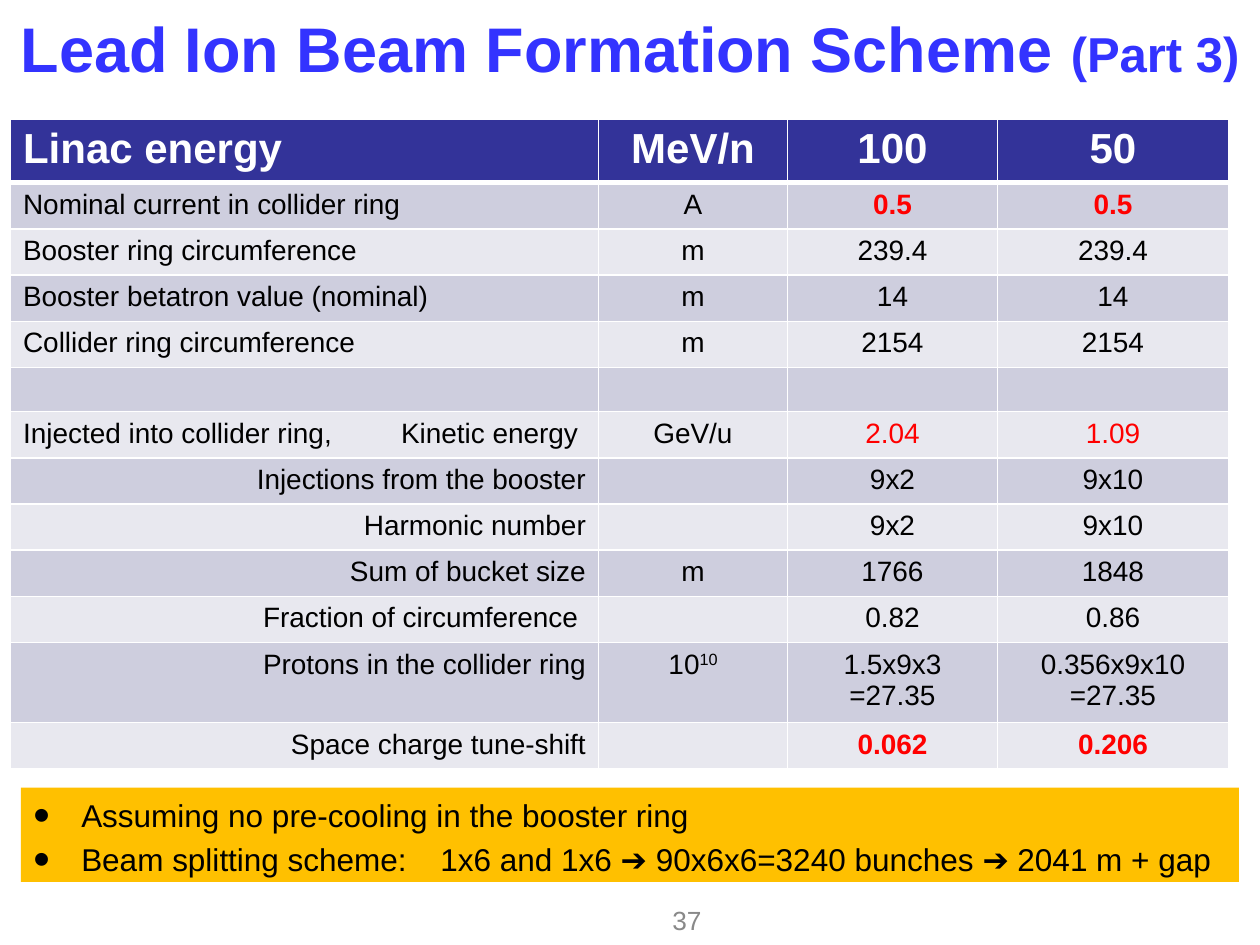
from lxml import etree
from pptx import Presentation
from pptx import util as u
from pptx.dml.color import RGBColor
from pptx.enum import shapes, text
from pptx.oxml import ns

BLUE = RGBColor(0x33, 0x33, 0xFF)
NAVY = RGBColor(0x33, 0x33, 0x99)
LILAC = RGBColor(0xCE, 0xCE, 0xDE)
PALE = RGBColor(0xE8, 0xE8, 0xEF)
AMBER = RGBColor(0xFF, 0xC0, 0x00)
GRAY = RGBColor(0x89, 0x89, 0x89)
RED = RGBColor(0xFF, 0x00, 0x00)
BLACK = RGBColor(0x00, 0x00, 0x00)
WHITE = RGBColor(0xFF, 0xFF, 0xFF)

LEFT, CENTER, RIGHT = text.PP_ALIGN.LEFT, text.PP_ALIGN.CENTER, text.PP_ALIGN.RIGHT
UNIT = u.Inches(1) / 6
COLUMNS = [28, 9, 10, 11]
HEADER_ROW, BODY_ROW, DOUBLE_ROW = 2.8, 2.09, 3.57

ROWS = [
    ("Linac energy", "MeV/n", "100", "50"),
    ("Nominal current in collider ring", "A", "0.5", "0.5"),
    ("Booster ring circumference", "m", "239.4", "239.4"),
    ("Booster betatron value (nominal)", "m", "14", "14"),
    ("Collider ring circumference", "m", "2154", "2154"),
    ("", "", "", ""),
    ("Injected into collider ring,\tKinetic energy", "GeV/u", "2.04", "1.09"),
    ("Injections from the booster", "", "9x2", "9x10"),
    ("Harmonic number", "", "9x2", "9x10"),
    ("Sum of bucket size", "m", "1766", "1848"),
    ("Fraction of circumference ", "", "0.82", "0.86"),
    ("Protons in the collider ring", "10^10", "1.5x9x3\n=27.35", "0.356x9x10\n=27.35"),
    ("Space charge tune-shift", "", "0.062", "0.206"),
]
FIRST_INDENTED = 7
RED_ROWS = {1, 6, 12}
BOLD_ROWS = {0, 1, 12}
NOTES = [
    "Assuming no pre-cooling in the booster ring",
    "Beam splitting scheme:\t1x6 and 1x6 ➔ 90x6x6=3240 bunches ➔ 2041 m + gap",
]


def grid(*values):
    return [u.Emu(round(v * UNIT)) for v in values]


def set_font(p, size, color, bold=False):
    p.font.name = "Arial"
    p.font.size = u.Pt(size)
    p.font.bold = bold
    p.font.color.rgb = color


def add_tab(p, inches):
    tabs = etree.SubElement(p._p.get_or_add_pPr(), ns.qn("a:tabLst"))
    etree.SubElement(tabs, ns.qn("a:tab"), pos=str(u.Inches(inches)), algn="l")


def set_borders(cell, bottom):
    props = cell._tc.get_or_add_tcPr()
    for i, (side, points) in enumerate((("L", 1), ("R", 1), ("T", 1), ("B", bottom))):
        line = etree.Element(ns.qn(f"a:ln{side}"), w=str(u.Pt(points)))
        fill = etree.SubElement(line, ns.qn("a:solidFill"))
        etree.SubElement(fill, ns.qn("a:srgbClr"), val=str(WHITE))
        props.insert(i, line)


def add_title(s, box):
    tf = s.shapes.add_textbox(*grid(*box)).text_frame
    tf.word_wrap = True
    tf.margin_left = tf.margin_right = 0
    tf.vertical_anchor = text.MSO_ANCHOR.MIDDLE
    p = tf.paragraphs[0]
    p.alignment = CENTER
    set_font(p, 36, BLUE, True)
    for words, size in (("Lead Ion Beam Formation Scheme ", 36), ("(Part 3)", 28)):
        r = p.add_run()
        r.text = words
        r.font.size = u.Pt(size)


def fill_cell(cell, row, col, words):
    cell.fill.solid()
    cell.fill.fore_color.rgb = NAVY if row == 0 else LILAC if row % 2 else PALE
    set_borders(cell, 3 if row == 0 else 1)
    if not words:
        cell.margin_top = cell.margin_bottom = 0
    base, _, power = words.partition("^")
    cell.text_frame.text = base
    is_red = col > 1 and row in RED_ROWS
    for p in cell.text_frame.paragraphs:
        p.alignment = CENTER if col else RIGHT if row >= FIRST_INDENTED else LEFT
        if "\t" in words:
            add_tab(p, 3)
        color = WHITE if row == 0 else RED if is_red else BLACK
        set_font(p, 16 if row else 24, color, row == 0 or is_red and row in BOLD_ROWS)
        if power:
            r = p.add_run()
            r.text = power
            r.font._element.set("baseline", "30000")


def add_beam_table(s, left, top):
    heights = [HEADER_ROW if i == 0 else DOUBLE_ROW if "\n" in row[2] else BODY_ROW
               for i, row in enumerate(ROWS)]
    box = grid(left, top, sum(COLUMNS), sum(heights))
    table = s.shapes.add_table(len(ROWS), len(COLUMNS), *box).table
    for column, width in zip(table.columns, grid(*COLUMNS)):
        column.width = width
    for i, (row, height) in enumerate(zip(ROWS, grid(*heights))):
        table.rows[i].height = height
        for j, words in enumerate(row):
            fill_cell(table.cell(i, j), i, j, words)


def add_notes(s, box):
    sp = s.shapes.add_shape(shapes.MSO_SHAPE.RECTANGLE, *grid(*box))
    sp.shadow.inherit = False
    sp.fill.solid()
    sp.fill.fore_color.rgb = AMBER
    sp.line.fill.background()
    tf = sp.text_frame
    tf.word_wrap = True
    tf.vertical_anchor = text.MSO_ANCHOR.TOP
    tf.margin_top = u.Inches(0.07)
    tf.text = "\n".join(NOTES)
    for i, p in enumerate(tf.paragraphs):
        p.alignment = LEFT
        if i:
            p.space_before = u.Pt(3.6)
        props = p._p.get_or_add_pPr()
        props.set("marL", str(u.Inches(0.38)))
        props.set("indent", str(u.Inches(-0.38)))
        etree.SubElement(props, ns.qn("a:buSzPct"), val="150000")
        etree.SubElement(props, ns.qn("a:buFont"), typeface="Arial")
        etree.SubElement(props, ns.qn("a:buChar"), char="•")
        if "\t" in NOTES[i]:
            add_tab(p, 3.23)
        set_font(p, 18, BLACK)


def add_page_number(s, box):
    tf = s.shapes.add_textbox(*grid(*box)).text_frame
    tf.word_wrap = True
    tf.vertical_anchor = text.MSO_ANCHOR.MIDDLE
    tf.text = "37"
    p = tf.paragraphs[0]
    p.alignment = RIGHT
    set_font(p, 15, GRAY)


def main():
    prs = Presentation()
    prs.slide_width, prs.slide_height = grid(60, 45)
    s = prs.slides.add_slide(prs.slide_layouts[6])
    add_title(s, (0, 0, 60, 4.5))
    add_beam_table(s, 0.5, 5.7)
    add_notes(s, (1, 37.5, 58, 4.5))
    add_page_number(s, (25, 42.6, 9, 2.4))
    prs.save("out.pptx")


if __name__ == "__main__":
    main()
